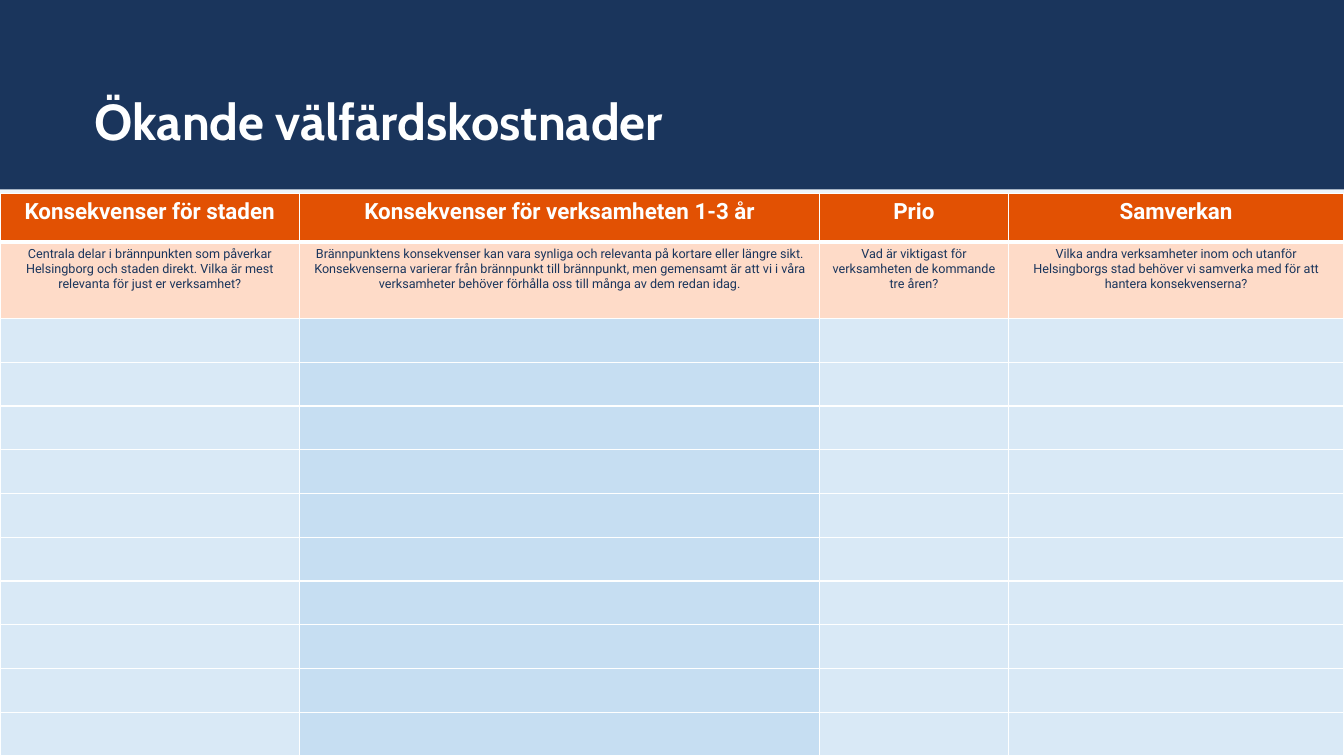
from lxml.etree import SubElement
from pptx import Presentation
from pptx.dml.color import RGBColor
from pptx.enum.shapes import MSO_SHAPE
from pptx.enum.text import MSO_ANCHOR, PP_ALIGN
from pptx.oxml.ns import qn
from pptx.util import Inches, Pt

TITLE = "Ökande välfärdskostnader"
# heading, guiding text, column width
COLUMNS = [
    ("Konsekvenser för staden",
     "Centrala delar i brännpunkten som påverkar Helsingborg och staden direkt. "
     "Vilka är mest relevanta för just er verksamhet?", 2.97),
    ("Konsekvenser för verksamheten 1-3 år",
     "Brännpunktens konsekvenser kan vara synliga och relevanta på kortare eller "
     "längre sikt. Konsekvenserna varierar från brännpunkt till brännpunkt, men "
     "gemensamt är att vi i våra verksamheter behöver förhålla oss till många av "
     "dem redan idag.", 5.16),
    ("Prio", "Vad är viktigast för verksamheten de kommande tre åren?", 1.87),
    ("Samverkan",
     "Vilka andra verksamheter inom och utanför Helsingborgs stad behöver vi "
     "samverka med för att hantera konsekvenserna?", 3.33),
]
BLANK_ROWS = 10
STRONG_COL = 1

WIDTH, HEIGHT = 13.33, 7.5
BAND_H = 1.88
TABLE_TOP = 1.92
HEAD_H, GUIDE_H = 0.48, 0.76
BLANK_H = (HEIGHT - TABLE_TOP - HEAD_H - GUIDE_H) / BLANK_ROWS

NAVY = RGBColor(0x1A, 0x35, 0x5C)
WHITE = RGBColor(0xFE, 0xFF, 0xFF)
ORANGE = RGBColor(0xE2, 0x51, 0x03)
PEACH = RGBColor(0xFE, 0xDB, 0xC8)
BLUE = RGBColor(0xC6, 0xDE, 0xF2)
PALE = RGBColor(0xEE, 0xF5, 0xFB)


def write(frame, text, font="Roboto", size=9, color=NAVY, bold=False,
          align=PP_ALIGN.CENTER, spacing=None):
    para = frame.paragraphs[0]
    para.alignment = align
    para.line_spacing = spacing
    run = para.add_run()
    run.text = text
    run.font.name = font
    run.font.size = Pt(size)
    run.font.bold = bold
    run.font.color.rgb = color


def paint(cell, color, alpha=100, top=1, bottom=1):
    """Give a cell its white borders (in points) and its fill."""
    props = cell._tc.get_or_add_tcPr()
    for side, width in (("L", 1), ("R", 1), ("T", top), ("B", bottom)):
        line = SubElement(props, qn(f"a:ln{side}"), w=str(Pt(width)))
        fill = SubElement(line, qn("a:solidFill"))
        SubElement(fill, qn("a:srgbClr"), val=str(WHITE))
    cell.fill.solid()
    cell.fill.fore_color.rgb = color
    if alpha < 100:
        tint = props.find(qn("a:solidFill")).find(qn("a:srgbClr"))
        SubElement(tint, qn("a:alpha"), val=str(alpha * 1000))


def add_title(slide):
    band = slide.shapes.add_shape(MSO_SHAPE.RECTANGLE, 0, 0, Inches(WIDTH), Inches(BAND_H))
    band.shadow.inherit = False
    band.fill.solid()
    band.fill.fore_color.rgb = NAVY
    band.line.fill.background()

    box = slide.shapes.add_textbox(Inches(0.94), Inches(0.24), Inches(10), Inches(1.26))
    frame = box.text_frame
    frame.word_wrap = True
    frame.vertical_anchor = MSO_ANCHOR.BOTTOM
    frame.margin_left = frame.margin_right = frame.margin_top = frame.margin_bottom = 0
    write(frame, TITLE, font="Cabin", size=36, color=WHITE, bold=True,
          align=PP_ALIGN.LEFT, spacing=0.9)


def add_grid(slide):
    heights = [HEAD_H, GUIDE_H] + [BLANK_H] * BLANK_ROWS
    table = slide.shapes.add_table(
        len(heights), len(COLUMNS), 0, Inches(TABLE_TOP),
        Inches(WIDTH), Inches(HEIGHT - TABLE_TOP)).table
    table.horz_banding = False
    for row, height in zip(table.rows, heights):
        row.height = Inches(height)
    for col, (heading, guide, width) in enumerate(COLUMNS):
        table.columns[col].width = Inches(width)
        head, hint = table.cell(0, col), table.cell(1, col)
        paint(head, ORANGE, bottom=3)
        write(head.text_frame, heading, size=16, color=WHITE, bold=True)
        paint(hint, PEACH, top=3)
        write(hint.text_frame, guide)
        for row in range(2, len(heights)):
            paint(table.cell(row, col), BLUE, alpha=100 if col == STRONG_COL else 50)


def main():
    deck = Presentation()
    deck.slide_width, deck.slide_height = Inches(WIDTH), Inches(HEIGHT)
    slide = deck.slides.add_slide(deck.slide_layouts[6])
    slide.background.fill.solid()
    slide.background.fill.fore_color.rgb = PALE
    add_title(slide)
    add_grid(slide)
    deck.save("out.pptx")


if __name__ == "__main__":
    main()
